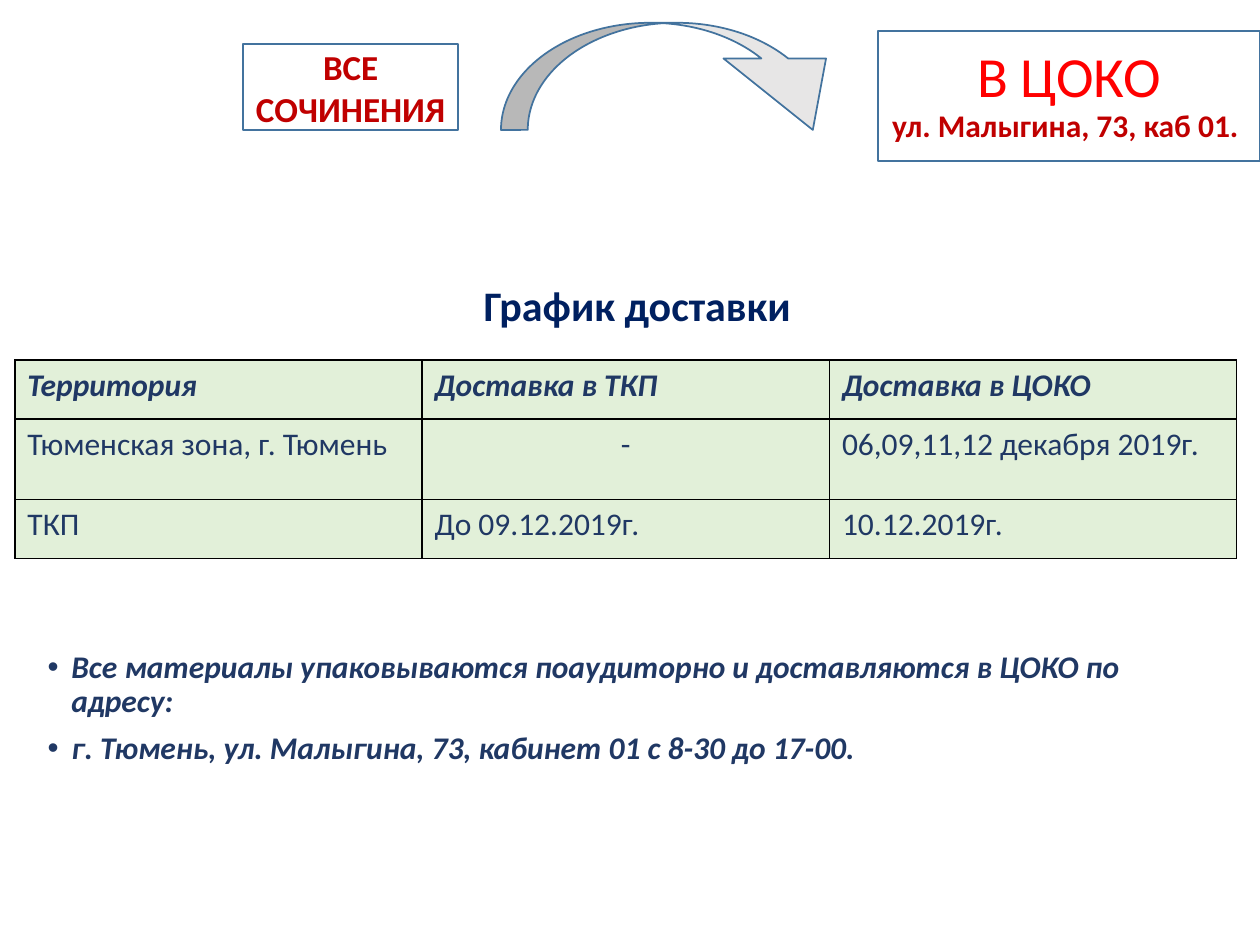
from copy import deepcopy
from lxml import etree
from pptx import Presentation
from pptx.dml.color import RGBColor
from pptx.enum import shapes, text
from pptx.oxml import ns
from pptx.util import Cm, Pt

WHITE = RGBColor(0xFF, 0xFF, 0xFF)
GREY = RGBColor(0xE7, 0xE6, 0xE6)
BLUE = RGBColor(0x43, 0x73, 0x9E)
NAVY = RGBColor(0x20, 0x38, 0x64)
DARK = RGBColor(0x00, 0x20, 0x60)
RED = RGBColor(0xFF, 0x00, 0x00)
WINE = RGBColor(0xC0, 0x00, 0x00)
GREEN = RGBColor(0xE2, 0xF0, 0xD9)


def style(run, size, color, bold=False, italic=False):
    font = run.font
    font.name, font.size = "Calibri", Pt(size)
    font.bold, font.italic = bold, italic
    font.color.rgb = color


def paint(shape, fill):
    shape.shadow.inherit = False
    shape.fill.solid()
    shape.fill.fore_color.rgb = fill
    shape.line.color.rgb = BLUE
    shape.line.width = Pt(1)


prs = Presentation()
prs.slide_width, prs.slide_height = Cm(25.4), Cm(19.05)
slide = prs.slides.add_slide(prs.slide_layouts[5])

title = slide.shapes.title
title.left, title.top, title.width, title.height = Cm(17.7), Cm(0.63), Cm(7.7), Cm(2.62)
paint(title, WHITE)
frame = title.text_frame
frame.text = "В ЦОКО\vул. Малыгина, 73, каб 01. "
frame.auto_size = text.MSO_AUTO_SIZE.NONE
frame.vertical_anchor = text.MSO_ANCHOR.MIDDLE
para = frame.paragraphs[0]
para.alignment = text.PP_ALIGN.CENTER
para.line_spacing = 0.9
head, place = para.runs
style(head, 32.4, RED)
style(place, 18, WINE, True)
para._p.find(ns.qn("a:br")).append(deepcopy(head.font._element))

notes = slide.shapes.add_textbox(Cm(0.71), Cm(13), Cm(23.44), Cm(4.6))
frame = notes.text_frame
frame.word_wrap = True
frame.text = (
    "Все материалы упаковываются поаудиторно и доставляются в ЦОКО по адресу:\n"
    "г. Тюмень, ул. Малыгина, 73, кабинет 01 с 8-30 до 17-00."
)
for para in frame.paragraphs:
    para.line_spacing = 0.9
    para.space_before = Pt(7.5)
    style(para.runs[0], 18, NAVY, True, True)
    props = para._p.get_or_add_pPr()
    props.set("marL", str(Cm(0.48)))
    props.set("indent", str(-Cm(0.48)))
    etree.SubElement(props, ns.qn("a:buFont"), typeface="Arial")
    etree.SubElement(props, ns.qn("a:buChar"), char="•")

box = slide.shapes.add_shape(shapes.MSO_SHAPE.RECTANGLE, Cm(4.9), Cm(0.89), Cm(4.34), Cm(1.73))
paint(box, WHITE)
frame = box.text_frame
frame.text = "ВСЕ СОЧИНЕНИЯ"
frame.word_wrap = True
frame.vertical_anchor = text.MSO_ANCHOR.MIDDLE
frame.paragraphs[0].alignment = text.PP_ALIGN.CENTER
style(frame.paragraphs[0].runs[0], 20, WINE, True)

arrow = slide.shapes.add_shape(
    shapes.MSO_SHAPE.CURVED_DOWN_ARROW, Cm(10.1), Cm(0.46), Cm(7.32), Cm(2.16)
)
paint(arrow, GREY)
for i, value in enumerate((0.25, 0.957, 0.667)):
    arrow.adjustments[i] = value

rows = (
    ("Территория", "Доставка в ТКП", "Доставка в ЦОКО"),
    ("Тюменская зона, г. Тюмень", "-", "06,09,11,12 декабря 2019г."),
    ("ТКП", "До 09.12.2019г.", "10.12.2019г."),
)
table = slide.shapes.add_table(3, 3, Cm(0.3), Cm(7.26), Cm(24.63), Cm(4)).table
for row, height in zip(table.rows, (1.19, 1.62, 1.19)):
    row.height = Cm(height)
for r, row in enumerate(rows):
    for c, word in enumerate(row):
        cell = table.cell(r, c)
        cell.text = word
        para = cell.text_frame.paragraphs[0]
        style(para.runs[0], 18, NAVY, r == 0, r == 0)
        if word == "-":
            para.alignment = text.PP_ALIGN.CENTER
        props = cell._tc.get_or_add_tcPr()
        for side in ("lnL", "lnR", "lnT", "lnB"):
            line = etree.SubElement(props, ns.qn("a:" + side), w=str(Pt(1)))
            fill = etree.SubElement(line, ns.qn("a:solidFill"))
            etree.SubElement(fill, ns.qn("a:srgbClr"), val="000000")
        cell.fill.solid()
        cell.fill.fore_color.rgb = GREEN

label = slide.shapes.add_textbox(Cm(9.5), Cm(5.51), Cm(6.78), Cm(1.27))
frame = label.text_frame
frame.word_wrap = False
frame.auto_size = text.MSO_AUTO_SIZE.SHAPE_TO_FIT_TEXT
frame.text = "График доставки"
style(frame.paragraphs[0].runs[0], 24, DARK, True)

prs.save("out.pptx")
